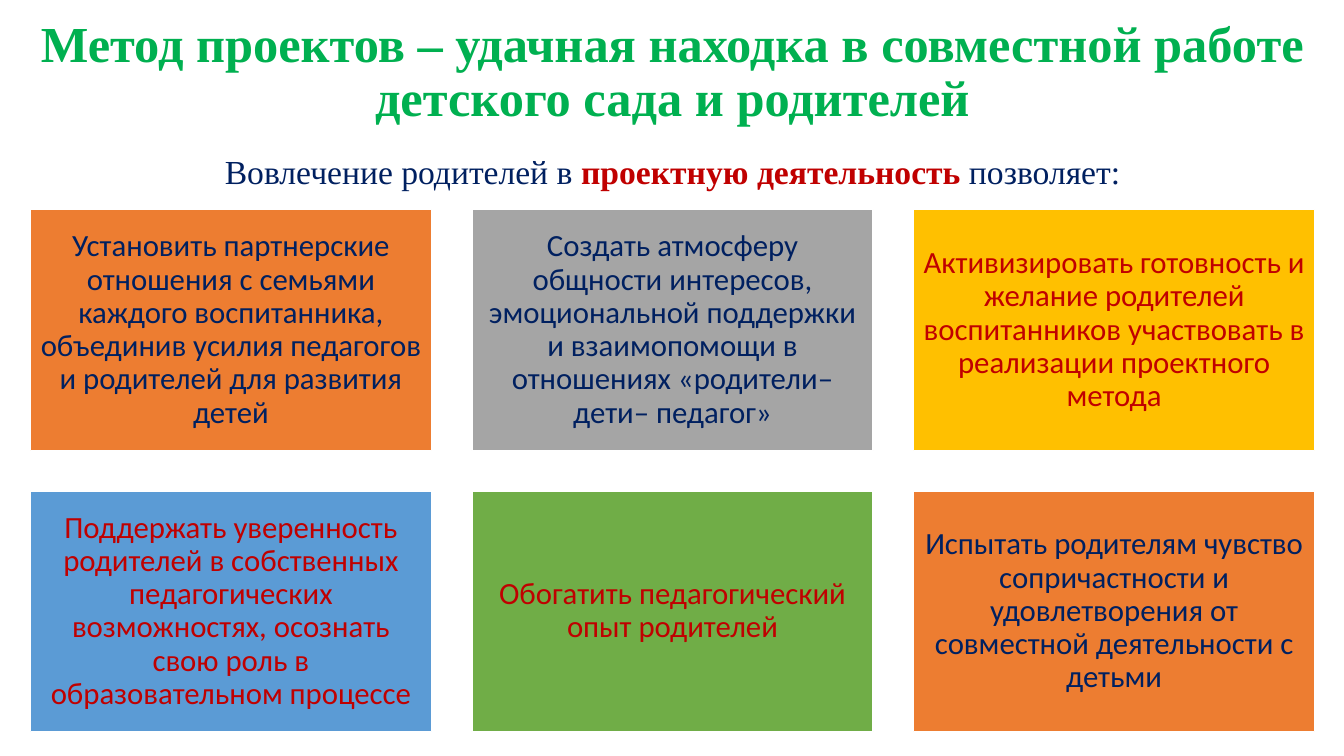
from dataclasses import dataclass

from pptx import Presentation
from pptx.dml.color import RGBColor
from pptx.enum.shapes import MSO_SHAPE
from pptx.enum.text import MSO_ANCHOR, PP_ALIGN
from pptx.shapes.autoshape import Shape
from pptx.slide import Slide
from pptx.util import Inches, Pt

# Colours
WHITE = RGBColor(0xFF, 0xFF, 0xFF)
TITLE_GREEN = RGBColor(0x00, 0xB0, 0x50)
NAVY = RGBColor(0x00, 0x20, 0x60)
RED = RGBColor(0xC0, 0x00, 0x00)
ORANGE = RGBColor(0xED, 0x7D, 0x31)
GRAY = RGBColor(0xA5, 0xA5, 0xA5)
GOLD = RGBColor(0xFF, 0xC0, 0x00)
BLUE = RGBColor(0x5B, 0x9B, 0xD5)
GREEN = RGBColor(0x70, 0xAD, 0x47)

# Card grid, in inches
COLUMNS = 3
GRID_LEFT, GRID_TOP = 0.3, 2.08
CARD_WIDTH, CARD_HEIGHT, GAP = 3.98, 2.39, 0.4

SERIF = "Times New Roman"
CARD_FRAME = {"word_wrap": True, "vertical_anchor": MSO_ANCHOR.MIDDLE} | {
    f"margin_{side}": Inches(0.09) for side in ("left", "top", "right", "bottom")
}


@dataclass(frozen=True)
class Span:
    text: str
    color: RGBColor
    size: int
    font: str
    bold: bool = False


@dataclass(frozen=True)
class Card:
    text: str
    fill: RGBColor
    color: RGBColor


CARDS = [
    Card("Установить партнерские отношения с семьями каждого воспитанника, "
         "объединив усилия педагогов и родителей для развития детей", ORANGE, NAVY),
    Card("Создать атмосферу общности интересов, эмоциональной поддержки "
         "и взаимопомощи в отношениях «родители– дети– педагог»", GRAY, NAVY),
    Card("Активизировать готовность и желание родителей воспитанников "
         "участвовать в реализации проектного метода", GOLD, RED),
    Card("Поддержать уверенность родителей в собственных педагогических "
         "возможностях, осознать свою роль в образовательном процессе", BLUE, RED),
    Card("Обогатить педагогический опыт родителей", GREEN, RED),
    Card("Испытать родителям чувство сопричастности и удовлетворения от "
         "совместной деятельности с детьми", ORANGE, NAVY),
]


def apply_format(target: object, values: dict) -> None:
    for name, value in values.items():
        setattr(target, name, value)


def write_text(box: Shape, spans: list[Span], frame: dict, spacing: float) -> None:
    apply_format(box.text_frame, frame)
    para = box.text_frame.paragraphs[0]
    apply_format(para, {"alignment": PP_ALIGN.CENTER, "line_spacing": spacing})
    for span in spans:
        run = para.add_run()
        run.text = span.text
        apply_format(run.font, {"name": span.font, "size": Pt(span.size), "bold": span.bold})
        run.font.color.rgb = span.color


def add_label(page: Slide, place: tuple[float, ...], spans: list[Span],
              anchor: MSO_ANCHOR, spacing: float) -> None:
    box = page.shapes.add_textbox(*map(Inches, place))
    write_text(box, spans, {"word_wrap": True, "vertical_anchor": anchor}, spacing)


def add_card(page: Slide, index: int, card: Card) -> None:
    row, column = divmod(index, COLUMNS)
    left = GRID_LEFT + column * (CARD_WIDTH + GAP)
    top = GRID_TOP + row * (CARD_HEIGHT + GAP)
    box = page.shapes.add_shape(
        MSO_SHAPE.RECTANGLE, *map(Inches, (left, top, CARD_WIDTH, CARD_HEIGHT)))
    box.shadow.inherit = False
    box.fill.solid()
    box.fill.fore_color.rgb = card.fill
    box.line.color.rgb = WHITE
    box.line.width = Pt(1)
    write_text(box, [Span(card.text, card.color, 22, "Calibri")], CARD_FRAME, 0.9)


def main() -> None:
    deck = Presentation()
    apply_format(deck, {"slide_width": Inches(13.33), "slide_height": Inches(7.5)})
    page = deck.slides.add_slide(deck.slide_layouts[6])

    # Title and introduction
    add_label(page, (0.3, 0, 12.74, 1.45), [
        Span("Метод проектов – удачная находка в совместной работе "
             "детского сада и родителей", TITLE_GREEN, 36, SERIF, True),
    ], MSO_ANCHOR.MIDDLE, 0.9)
    add_label(page, (1.93, 1.45, 9.48, 0.91), [
        Span("Вовлечение родителей в ", NAVY, 24, SERIF),
        Span("проектную деятельность ", RED, 24, SERIF, True),
        Span("позволяет:", NAVY, 24, SERIF),
    ], MSO_ANCHOR.TOP, 1.0)

    # Cards
    for index, card in enumerate(CARDS):
        add_card(page, index, card)

    deck.save("out.pptx")


if __name__ == "__main__":
    main()
